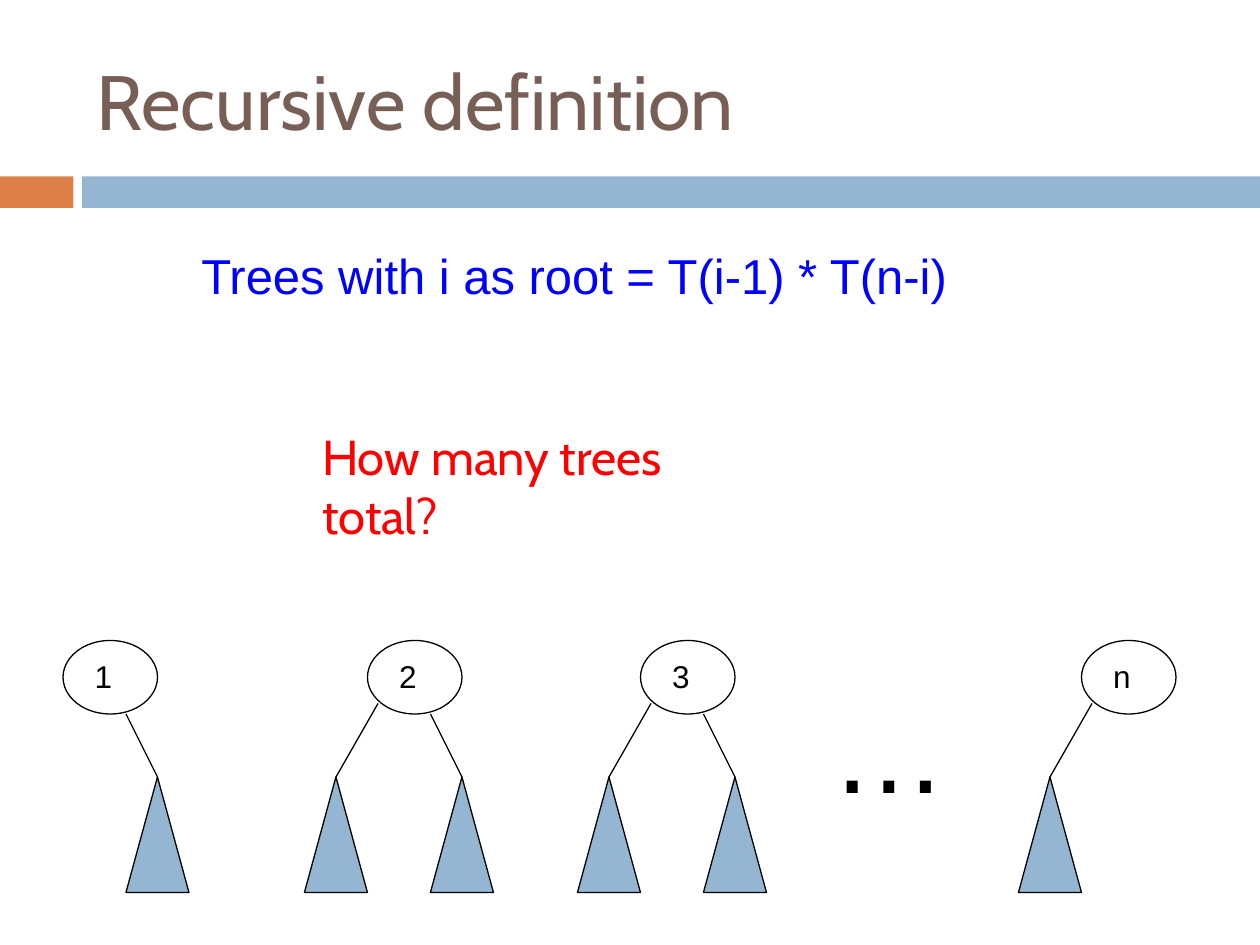
import pptx
import pptx.dml.color
import pptx.enum.shapes
import pptx.enum.text
import pptx.util
import lxml.etree

SHAPE = pptx.enum.shapes.MSO_SHAPE
ANCHOR = pptx.enum.text.MSO_ANCHOR
COLS, ROWS = 120, 90
WIDTH, HEIGHT = pptx.util.Inches(10), pptx.util.Inches(7.5)
BLACK, BLUE, ORANGE = "000000", "94B6D2", "DD8047"
NODE_ROW, APEX_ROW = 61, 74
TREES = [
    ("1", 6, ["right"]),
    ("2", 35, ["right", "left"]),
    ("3", 61, ["right", "left"]),
    ("n", 103, ["left"]),
]
BRANCHES = {"right": (6, 68, 6), "left": (1, 67, -6)}


def x(col):
    return round(WIDTH * col / COLS)


def y(row):
    return round(HEIGHT * row / ROWS)


def box(col, row, cols, rows):
    return x(col), y(row), x(cols), y(rows)


def rgb(value):
    return pptx.dml.color.RGBColor.from_string(value)


def apply(target, values):
    for name, value in values.items():
        setattr(target, name, value)


def set_line(line, color=BLACK):
    line.color.rgb = rgb(color)
    line.width = pptx.util.Pt(0.75)


def add_shape(s, kind, place, fill=None, outlined=True):
    sp = s.shapes.add_shape(kind, *box(*place))
    sp.shadow.inherit = False
    if fill:
        sp.fill.solid()
        sp.fill.fore_color.rgb = rgb(fill)
    else:
        sp.fill.background()
    if outlined:
        set_line(sp.line)
    else:
        sp.line.fill.background()
    return sp


def add_text(s, text, place, size, font="Arial", color=BLACK, anchor=ANCHOR.TOP):
    tf = s.shapes.add_textbox(*box(*place)).text_frame
    apply(tf, {"word_wrap": True, "vertical_anchor": anchor})
    r = tf.paragraphs[0].add_run()
    r.text = text
    apply(r.font, {"name": font, "size": pptx.util.Pt(size)})
    r.font.color.rgb = rgb(color)


def add_branch(s, col, side):
    start, row, offset = BRANCHES[side]
    subtree = add_shape(s, SHAPE.ISOSCELES_TRIANGLE, (col + offset, APEX_ROW, 6, 11), BLUE)
    line = s.shapes.add_connector(
        pptx.enum.shapes.MSO_CONNECTOR.STRAIGHT,
        x(col + start), y(row), x(col + offset + 3), y(APEX_ROW),
    )
    line.end_connect(subtree, 0)
    set_line(line.line)
    lxml.etree.SubElement(line._element.spPr, pptx.oxml.ns.qn("a:effectLst"))


def add_tree(s, label, col, sides):
    add_text(s, f" {label}", (col + 1, NODE_ROW + 1, 8, 4.8), 18)
    add_shape(s, SHAPE.OVAL, (col, NODE_ROW, 9, 7))
    for side in sides:
        add_branch(s, col, side)


def main():
    prs = pptx.Presentation()
    apply(prs, {"slide_width": WIDTH, "slide_height": HEIGHT})
    s = prs.slides.add_slide(prs.slide_layouts[6])
    add_shape(s, SHAPE.RECTANGLE, (0, 16.8, 7, 3), ORANGE, outlined=False)
    add_shape(s, SHAPE.RECTANGLE, (7.8, 16.8, 112.2, 3), BLUE, outlined=False)
    add_text(s, "Recursive definition", (8, 3, 107, 13), 44, "Cabin", "775F55", ANCHOR.MIDDLE)
    for tree in TREES:
        add_tree(s, *tree)
    add_text(s, "…", (78, 64, 13, 14.4), 66)
    add_text(s, "How many trees total?", (29.5, 40, 44, 6.8), 28, "Cabin", "FF0000")
    add_text(s, "Trees with i as root = T(i-1) * T(n-i)", (18, 22.8, 78.6, 6.8), 28, color="0000FF")
    prs.save("out.pptx")


if __name__ == "__main__":
    main()
